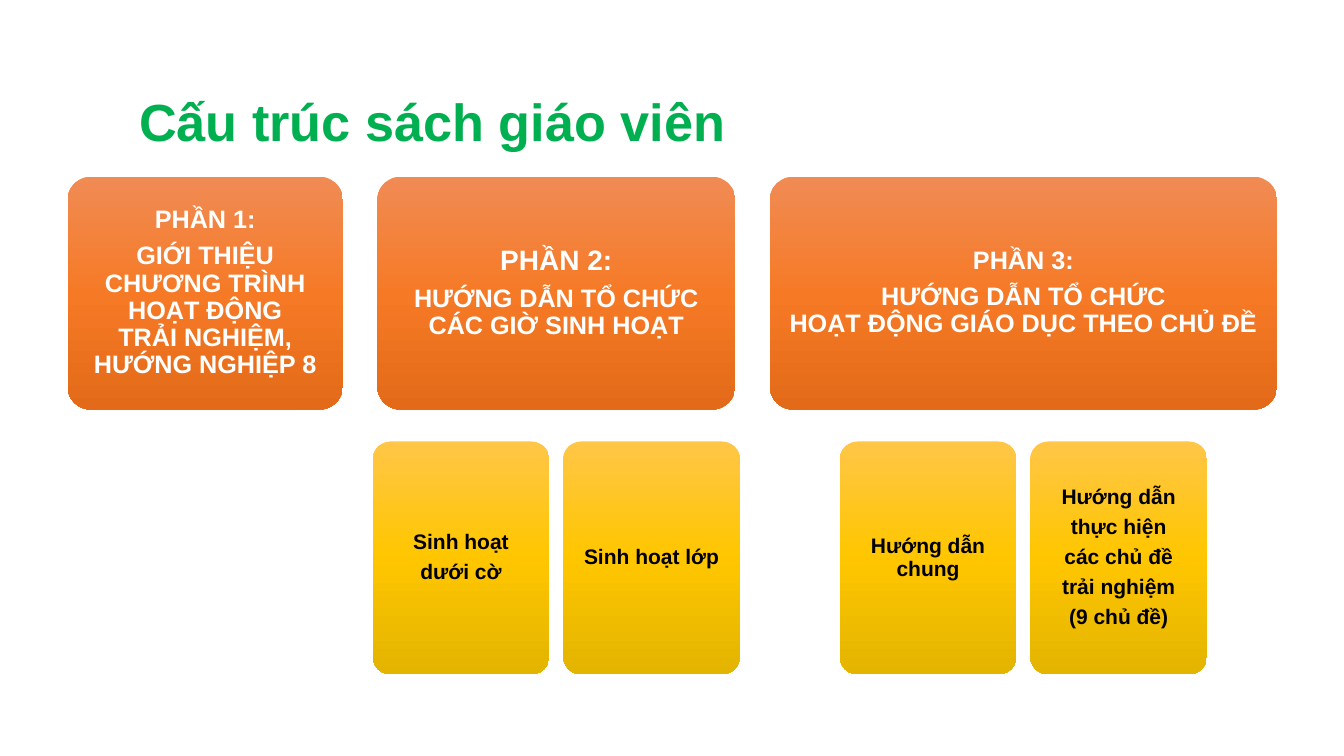
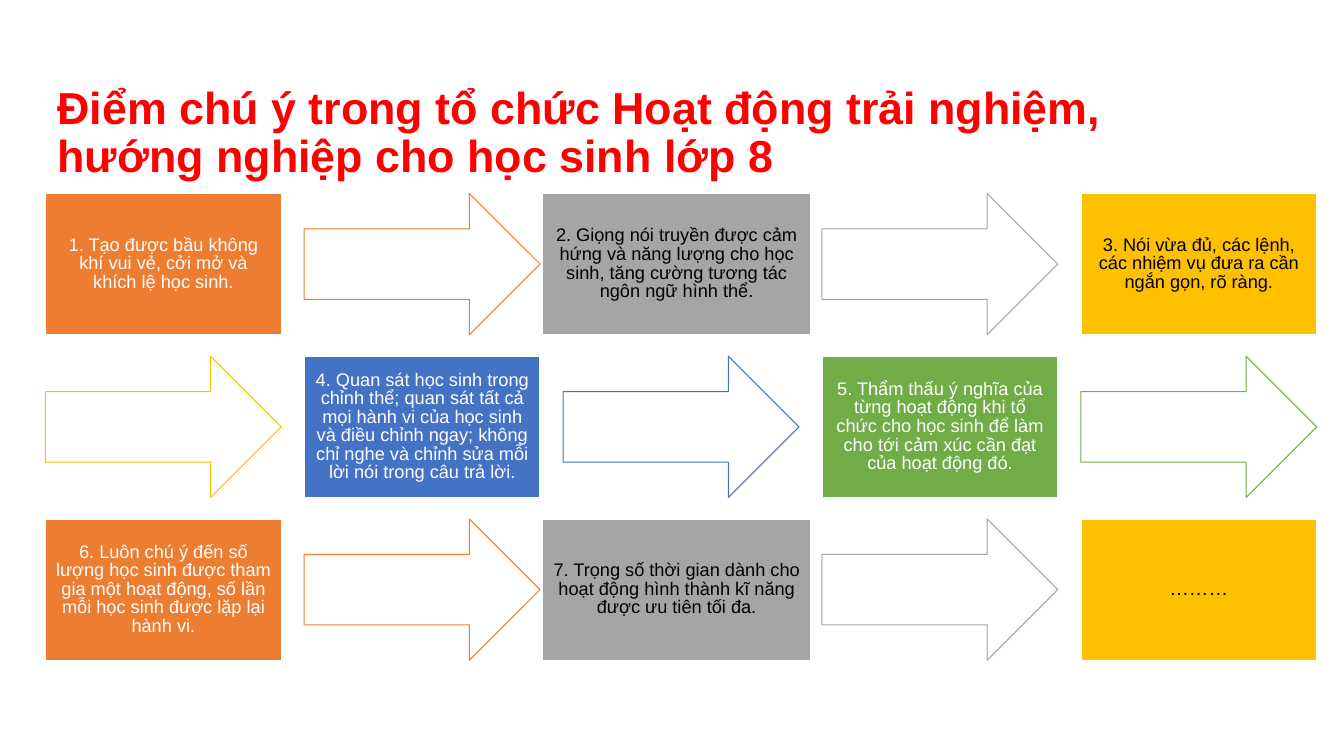
"""Build two slides on the teacher's book and on running class activities."""
from copy import deepcopy
from dataclasses import dataclass

from pptx import Presentation
from pptx.dml.color import RGBColor
from pptx.enum.shapes import MSO_SHAPE
from pptx.enum.text import MSO_ANCHOR, MSO_AUTO_SIZE, PP_ALIGN
from pptx.oxml.ns import qn
from pptx.util import Inches, Pt


@dataclass(frozen=True)
class Theme:
    font: str = "Arial"
    white: str = "FFFFFF"
    black: str = "000000"
    green: str = "00B050"
    red: str = "FF0000"
    warm: tuple = ("F08B54", "F67A26", "E36A18")
    gold: tuple = ("FFC647", "FFC600", "E3B400")
    steps: tuple = (("ED7D31", "FFFFFF"), ("A5A5A5", "000000"), ("FFC000", "000000"),
                    ("4472C4", "FFFFFF"), ("70AD47", "FFFFFF"))
    title: float = 37.3
    long: float = 32
    head: float = 18
    lead: float = 20
    small: float = 15
    step: float = 13
    dots: float = 14


theme = Theme()
deck = Presentation()
deck.slide_width, deck.slide_height = Inches(13.33), Inches(7.5)


def place(x, y, w, h):
    """Turn percentages of the slide into lengths."""
    wide, high = deck.slide_width / 100, deck.slide_height / 100
    return int(x * wide), int(y * high), int(w * wide), int(h * high)


def write(shape, lines, sizes, tone, space, align=PP_ALIGN.CENTER, bold=True, inset=None):
    """Fill a shape with one formatted paragraph per line."""
    frame = shape.text_frame
    form = {"word_wrap": True, "auto_size": MSO_AUTO_SIZE.NONE,
            "vertical_anchor": MSO_ANCHOR.MIDDLE}
    if inset:
        form.update({"margin_" + side: Inches(inset)
                     for side in ("left", "top", "right", "bottom")})
    for key, val in form.items():
        setattr(frame, key, val)
    frame.text = "\n".join(lines)
    for num, para in enumerate(frame.paragraphs):
        size = sizes[min(num, len(sizes) - 1)]
        para.alignment, para.line_spacing = align, space
        para.space_before = Pt(size * 0.35 if num else 0)
        for run in para.runs:
            for key, val in {"name": theme.font, "size": Pt(size), "bold": bold}.items():
                setattr(run.font, key, val)
            run.font.color.rgb = RGBColor.from_string(tone)


titles = [
    ("Cấu trúc sách giáo viên", (9.6, 11.07, 79.75, 9.73), theme.title, theme.green, 1),
    ("Điểm chú ý trong tổ chức Hoạt động trải nghiệm, hướng nghiệp cho học sinh lớp 8",
     (3.53, 12.6, 84.62, 10.27), theme.long, theme.red, 0.9),
]
pages = []
for text, area, size, tone, space in titles:
    page = deck.slides.add_slide(deck.slide_layouts[5])
    head = page.shapes.title
    for key, val in zip(("left", "top", "width", "height"), place(*area)):
        setattr(head, key, val)
    write(head, [text], [size], tone, space, PP_ALIGN.LEFT)
    pages.append(page)

parts = [
    (20.48, ["PHẦN 1:", "GIỚI THIỆU\vCHƯƠNG TRÌNH\vHOẠT ĐỘNG\vTRẢI NGHIỆM,\vHƯỚNG NGHIỆP 8"],
     [theme.head], []),
    (26.63, ["PHẦN 2:", "HƯỚNG DẪN TỔ CHỨC CÁC GIỜ SINH HOẠT"], [theme.lead, theme.head],
     [["Sinh hoạt", "dưới cờ"], ["Sinh hoạt lớp"]]),
    (37.73, ["PHẦN 3:", "HƯỚNG DẪN TỔ CHỨC\vHOẠT ĐỘNG GIÁO DỤC THEO CHỦ ĐỀ"], [theme.head],
     [["Hướng dẫn chung"],
      ["Hướng dẫn", "thực hiện", "các chủ đề", "trải nghiệm", "(9 chủ đề)"]]),
]
left, gap, tall = 5.03, 2.57, 30.8
leaf, pitch = 13.13, 14.18
cards = []
for wide, lines, sizes, kids in parts:
    cards.append(((left, 23.37, wide, tall), lines, sizes, theme.warm, theme.white, 0.07))
    start = left + wide / 2 - (pitch + leaf) / 2
    for num, kid in enumerate(kids):
        cards.append(((start + num * pitch, 58.4, leaf, tall), kid, [theme.small],
                      theme.gold, theme.black, 0.06))
    left += wide + gap

for area, lines, sizes, shades, tone, inset in cards:
    card = pages[0].shapes.add_shape(MSO_SHAPE.ROUNDED_RECTANGLE, *place(*area))
    card.shadow.inherit = False
    card.adjustments[0] = 0.1
    card.line.fill.background()
    card.fill.gradient()
    card.fill.gradient_angle = 270
    stops = card.element.spPr.find(qn("a:gradFill")).find(qn("a:gsLst"))
    stops.append(deepcopy(stops[0]))
    for num, (stop, shade) in enumerate(zip(card.fill.gradient_stops, shades)):
        stop.position = num / 2
        stop.color.rgb = RGBColor.from_string(shade)
    write(card, lines, sizes, tone, 0.9, inset=inset)

steps = [
    "1. Tạo được bầu không khí vui vẻ, cởi mở và khích lệ học sinh.",
    "2. Giọng nói truyền được cảm hứng và năng lượng cho học sinh, tăng cường tương tác "
    "ngôn ngữ hình thể.",
    "3. Nói vừa đủ, các lệnh, các nhiệm vụ đưa ra cần ngắn gọn, rõ ràng.",
    "4. Quan sát học sinh trong chỉnh thể; quan sát tất cả mọi hành vi của học sinh và điều "
    "chỉnh ngay; không chỉ nghe và chỉnh sửa mỗi lời nói trong câu trả lời.",
    "5. Thẩm thấu ý nghĩa của từng hoạt động khi tổ chức cho học sinh để làm cho tới cảm xúc "
    "cần đạt của hoạt động đó.",
    "6. Luôn chú ý đến số lượng học sinh được tham gia một hoạt động, số lần mỗi học sinh "
    "được lặp lại hành vi.",
    "7. Trọng số thời gian dành cho hoạt động hình thành kĩ năng được ưu tiên tối đa.",
    "………",
]
for cell in range(2 * len(steps) - 1):
    row, col = divmod(cell, 5)
    num, arrow = divmod(cell, 2)
    shade, tone = theme.steps[num % 5]
    x, y, w, h = 3.38 + col * 19.26, 25.6 + row * 21.53, 17.55, 18.67
    if col == 2 and not arrow:
        x, w = x - 1.54, w + 2.4
    kind = MSO_SHAPE.RIGHT_ARROW if arrow else MSO_SHAPE.RECTANGLE
    box = pages[1].shapes.add_shape(kind, *place(x, y, w, h))
    box.shadow.inherit = False
    box.line.color.rgb = RGBColor.from_string(shade if arrow else theme.white)
    box.line.width = Pt(0.75 if arrow else 1)
    if arrow:
        box.fill.background()
    else:
        box.fill.solid()
        box.fill.fore_color.rgb = RGBColor.from_string(shade)
        size = theme.dots if num == len(steps) - 1 else theme.step
        write(box, [steps[num]], [size], tone, 0.85, bold=False)

deck.save("out.pptx")
